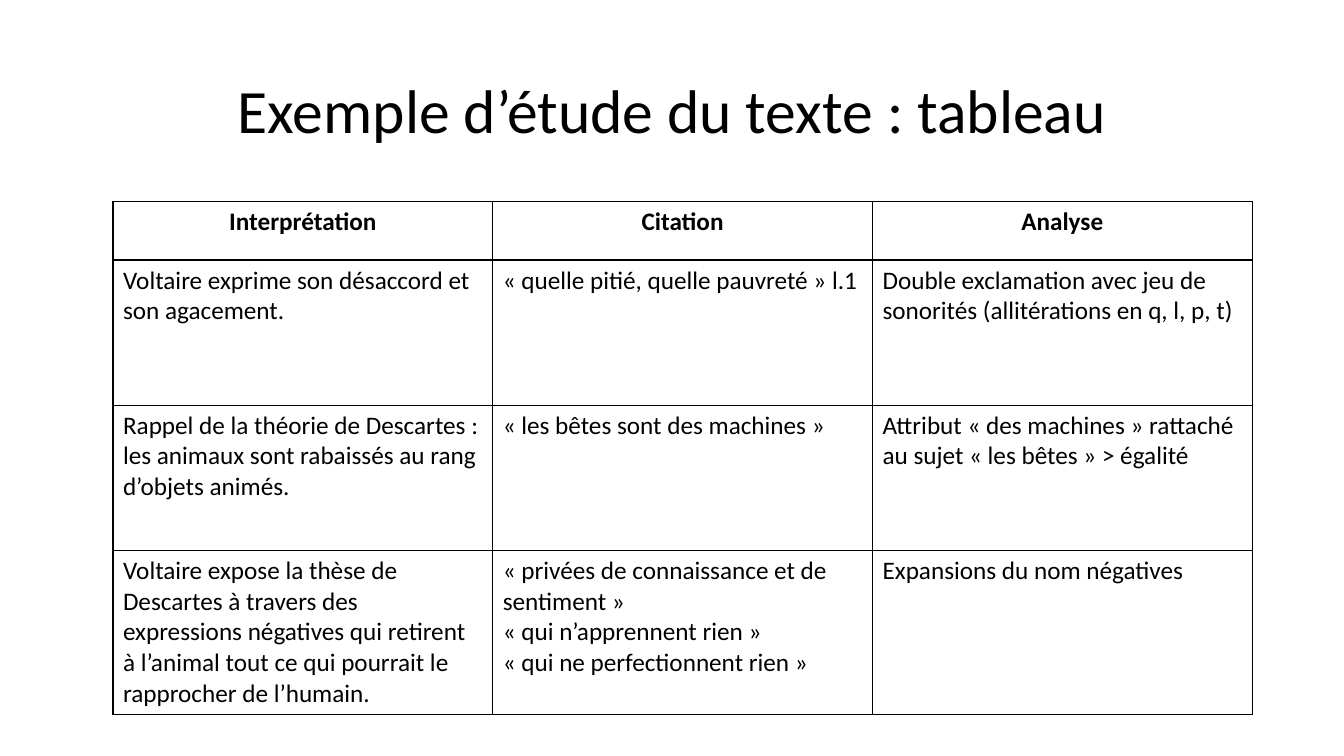
from lxml.etree import SubElement
from pptx import Presentation
from pptx.dml.color import RGBColor
from pptx.enum.text import MSO_ANCHOR, PP_ALIGN
from pptx.oxml.ns import qn
from pptx.util import Inches, Pt

COLORS = {"ink": "000000", "paper": "FFFFFF"}
FONT = "Calibri"
WIDE, HIGH = Inches(13.33), Inches(7.5)
HEADS = ["Interprétation", "Citation", "Analyse"]
ROWS = [
    ["Voltaire exprime son désaccord et son agacement.",
     "« quelle pitié, quelle pauvreté » l.1",
     "Double exclamation avec jeu de sonorités (allitérations en q, l, p, t)"],
    ["Rappel de la théorie de Descartes : les animaux sont rabaissés "
     "au rang d’objets animés.",
     "« les bêtes sont des machines »",
     "Attribut « des machines » rattaché au sujet « les bêtes » > égalité"],
    ["Voltaire expose la thèse de Descartes à travers des expressions "
     "négatives qui retirent à l’animal tout ce qui pourrait le rapprocher "
     "de l’humain.",
     "« privées de connaissance et de sentiment »\n"
     "« qui n’apprennent rien »\n« qui ne perfectionnent rien »",
     "Expansions du nom négatives"],
]


def style(frame, size, bold=False, **form):
    """Format every paragraph of a text frame."""
    look = {"name": FONT, "size": Pt(size), "bold": bold}
    for para in frame.paragraphs:
        for key, value in form.items():
            setattr(para, key, value)
        for run in para.runs:
            for key, value in look.items():
                setattr(run.font, key, value)
            run.font.color.rgb = RGBColor.from_string(COLORS["ink"])


def border(cell):
    """Draw a thin line on all four sides of a cell."""
    props = cell._tc.get_or_add_tcPr()
    for spot, side in enumerate(("lnL", "lnR", "lnT", "lnB")):
        line = SubElement(props, qn(f"a:{side}"), w=str(Pt(1)))
        fill = SubElement(line, qn("a:solidFill"))
        SubElement(fill, qn("a:srgbClr"), val=COLORS["ink"])
        props.insert(spot, line)


def add_title(slide, box, text):
    title = slide.shapes.title
    for key, value in zip(("left", "top", "width", "height"), box):
        setattr(title, key, value)
    frame = title.text_frame
    frame.text = text
    frame.word_wrap = True
    frame.vertical_anchor = MSO_ANCHOR.MIDDLE
    style(frame, 44, alignment=PP_ALIGN.CENTER, line_spacing=0.9)


def add_grid(slide, box, heads, rows):
    left, top, width, height = box
    data = [heads] + rows
    table = slide.shapes.add_table(
        len(data), len(heads), left, top, width, height).table
    table.horz_banding = False

    # Equal columns, a short header and equal body rows
    for col in table.columns:
        col.width = width // len(heads)
    head = Inches(0.58)
    for num, row in enumerate(table.rows):
        row.height = (height - head) // len(rows) if num else head

    # Cell text, fill and borders
    for num, texts in enumerate(data):
        for col, text in enumerate(texts):
            cell = table.cell(num, col)
            cell.text = text
            cell.fill.solid()
            cell.fill.fore_color.rgb = RGBColor.from_string(COLORS["paper"])
            border(cell)
            side = PP_ALIGN.LEFT if num else PP_ALIGN.CENTER
            style(cell.text_frame, 18, bold=num == 0, alignment=side)


def main():
    deck = Presentation()
    deck.slide_width, deck.slide_height = WIDE, HIGH
    slide = deck.slides.add_slide(deck.slide_layouts[5])
    add_title(slide, [Inches(n) for n in (0.92, 0.4, 11.5, 1.45)],
              "Exemple d’étude du texte : tableau")
    add_grid(slide, [Inches(n) for n in (1.12, 2, 11.3, 4.9)], HEADS, ROWS)
    deck.save("out.pptx")


if __name__ == "__main__":
    main()
